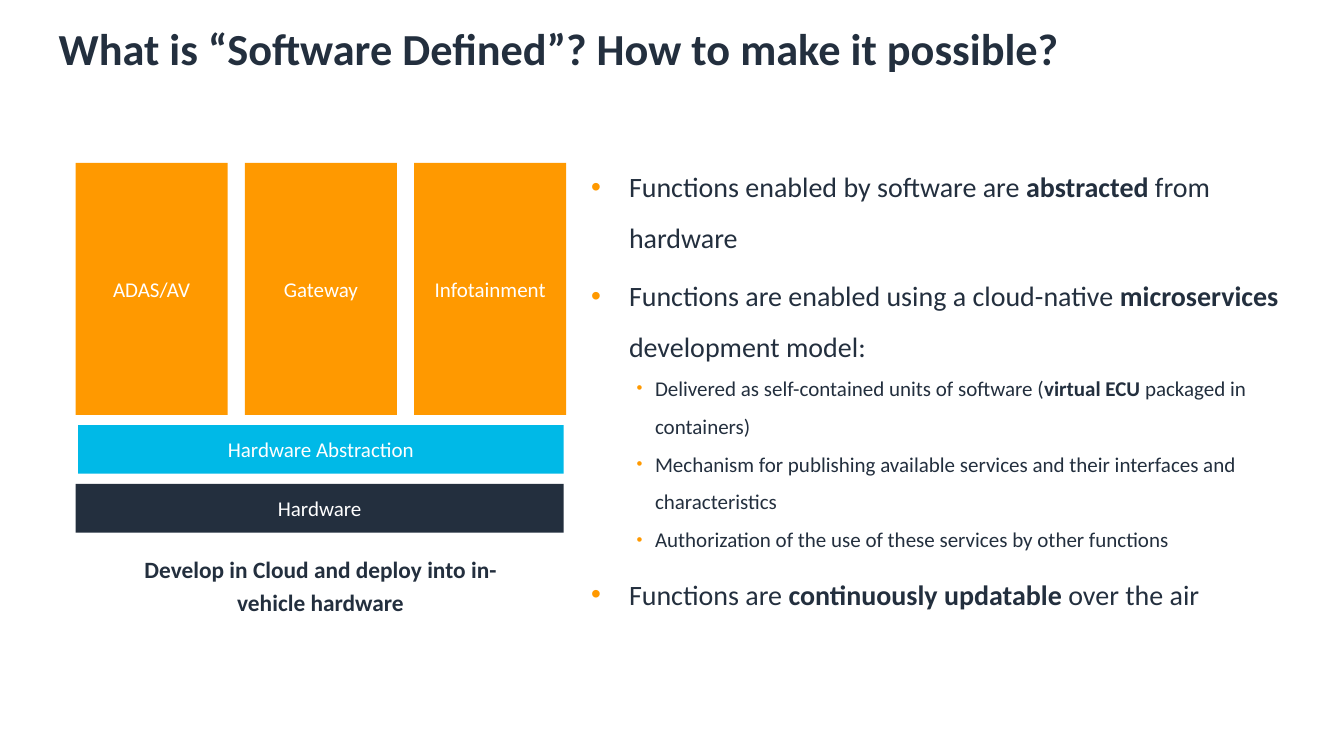
from dataclasses import dataclass

from lxml import etree
from pptx import Presentation
from pptx.dml.color import RGBColor
from pptx.enum import shapes, text
from pptx.oxml import ns
from pptx.util import Pt


@dataclass(frozen=True)
class Theme:
    font: str = "Calibri"
    navy: str = "232F3E"
    orange: str = "FF9900"
    cyan: str = "00B9E7"
    white: str = "FFFFFF"
    title: int = 38
    body: int = 24
    caption: int = 20
    small: int = 18


def write(para, content, theme, size, color=None, bold=False):
    for index, part in enumerate(content.split("**")):
        span = para.add_run()
        span.text = part
        span.font.name = theme.font
        span.font.size = Pt(size)
        span.font.bold = bold or index % 2 == 1
        span.font.color.rgb = RGBColor.from_string(color or theme.navy)


def add_bullet(para, color, left, hanging, percent):
    properties = para._p.get_or_add_pPr()
    properties.set("marL", str(Pt(left)))
    properties.set("indent", str(-Pt(hanging)))
    bullet_color = etree.SubElement(properties, ns.qn("a:buClr"))
    etree.SubElement(bullet_color, ns.qn("a:srgbClr"), val=color)
    etree.SubElement(properties, ns.qn("a:buSzPct"), val=str(percent * 1000))
    etree.SubElement(properties, ns.qn("a:buFont"), typeface="Arial")
    etree.SubElement(properties, ns.qn("a:buChar"), char="•")


class SlideBuilder:
    def __init__(self, page, theme):
        self.page = page
        self.theme = theme

    def text_frame(self, left, top, width, height):
        box = self.page.shapes.add_textbox(Pt(left), Pt(top), Pt(width), Pt(height))
        box.text_frame.word_wrap = True
        return box.text_frame

    def title(self, content, *place):
        para = self.text_frame(*place).paragraphs[0]
        write(para, content, self.theme, self.theme.title, bold=True)

    def block(self, label, color, left, top, width, height):
        box = self.page.shapes.add_shape(
            shapes.MSO_SHAPE.RECTANGLE, Pt(left), Pt(top), Pt(width), Pt(height))
        box.shadow.inherit = False
        box.fill.solid()
        box.fill.fore_color.rgb = RGBColor.from_string(color)
        box.line.fill.background()
        frame = box.text_frame
        frame.word_wrap = True
        frame.vertical_anchor = text.MSO_ANCHOR.MIDDLE
        para = frame.paragraphs[0]
        para.alignment = text.PP_ALIGN.CENTER
        write(para, label, self.theme, self.theme.small, self.theme.white)

    def caption(self, content, *place):
        frame = self.text_frame(*place)
        frame.margin_left = frame.margin_right = 0
        frame.margin_top = frame.margin_bottom = 0
        para = frame.paragraphs[0]
        para.alignment = text.PP_ALIGN.CENTER
        para.line_spacing = 1.2
        write(para, content, self.theme, self.theme.caption, bold=True)

    def bullets(self, items, *place):
        frame = self.text_frame(*place)
        for index, (level, content) in enumerate(items):
            para = frame.add_paragraph() if index else frame.paragraphs[0]
            para.level = level
            if level:
                add_bullet(para, self.theme.orange, 54.72, 15.84, 80)
            else:
                add_bullet(para, self.theme.orange, 32.4, 32.4, 100)
            para.line_spacing = 1.5
            para.space_before = Pt(7.2 if index and not level else 0)
            size = self.theme.small if level else self.theme.body
            write(para, content, self.theme, size)


def main():
    deck = Presentation()
    deck.slide_width, deck.slide_height = Pt(1152), Pt(648)
    theme = Theme()
    slide = SlideBuilder(deck.slides.add_slide(deck.slide_layouts[6]), theme)

    slide.title("What is “Software Defined”? How to make it possible?",
                43.2, 14.4, 1064.16, 68.4)
    slide.bullets([
        (0, "Functions enabled by software are **abstracted** from hardware"),
        (0, "Functions are enabled using a cloud-native **microservices **development model:"),
        (1, "Delivered as self-contained units of software (**virtual ECU **packaged in containers)"),
        (1, "Mechanism for publishing available services and their interfaces and characteristics"),
        (1, "Authorization of the use of these services by other functions"),
        (0, "Functions are **continuously updatable **over the air"),
    ], 499.68, 127.44, 607.68, 408.96)

    for column, domain in enumerate(["ADAS/AV", "Gateway", "Infotainment"]):
        slide.block(domain, theme.orange, 64.8 + column * 145.08, 139.68, 130.32, 216)
    slide.block("Hardware Abstraction", theme.cyan, 66.96, 364.32, 416.16, 41.76)
    slide.block("Hardware", theme.navy, 64.8, 414.72, 418.32, 41.76)
    slide.caption("Develop in Cloud and deploy into in-vehicle hardware",
                  103.68, 470.88, 342, 56.16)

    deck.save("out.pptx")


if __name__ == "__main__":
    main()
